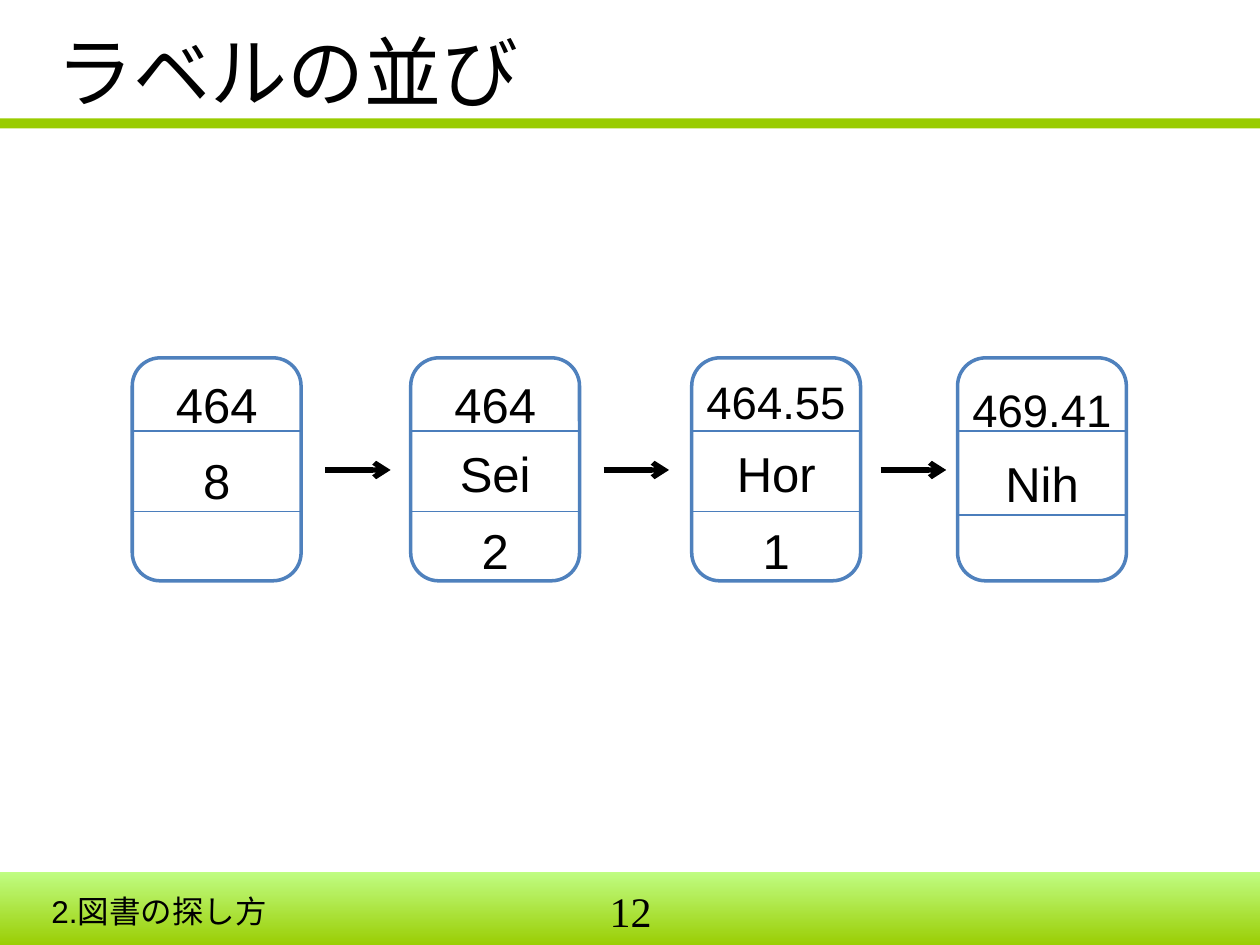
"""Build a slide showing the shelf order of four call-number labels."""
from lxml.etree import SubElement
from pptx import Presentation
from pptx.dml.color import RGBColor
from pptx.enum.shapes import MSO_CONNECTOR as CONNECTOR, MSO_SHAPE as SHAPE
from pptx.enum.text import MSO_ANCHOR as ANCHOR, PP_ALIGN as ALIGN
from pptx.oxml.ns import qn
from pptx.util import Inches, Pt

BLACK = RGBColor(0x00, 0x00, 0x00)
WHITE = RGBColor(0xFF, 0xFF, 0xFF)
GREEN = RGBColor(0x99, 0xCC, 0x00)
PALE_GREEN = RGBColor(0xC0, 0xFD, 0x83)
BORDER_BLUE = RGBColor(0x4F, 0x81, 0xBD)
DIVIDER_BLUE = RGBColor(0x4B, 0x7E, 0xBC)

LABEL_TOP, LABEL_WIDTH, LABEL_HEIGHT = 2.84, 1.34, 1.77
ARROW_Y, ARROW_LENGTH = 3.73, 0.52

deck = Presentation()
deck.slide_width, deck.slide_height = Inches(10), Inches(7.5)
page = deck.slides.add_slide(deck.slide_layouts[5])


def add_text(text, left, top, width, height, size, font="Arial", align=ALIGN.CENTER):
    box = page.shapes.add_textbox(Inches(left), Inches(top), Inches(width), Inches(height))
    box.text_frame.word_wrap = True
    para = box.text_frame.paragraphs[0]
    para.text = text
    para.alignment = align
    para.font.size = Pt(size)
    para.font.name = font
    para.font.color.rgb = BLACK


def add_line(left, y, length, color, weight):
    line = page.shapes.add_connector(
        CONNECTOR.STRAIGHT, Inches(left), Inches(y), Inches(left + length), Inches(y))
    line.line.color.rgb = color
    line.line.width = Pt(weight)
    SubElement(line._element.spPr, qn("a:effectLst"))
    return line


footer_band = page.shapes.add_shape(SHAPE.RECTANGLE, 0, Inches(6.92), Inches(10), Inches(0.6))
footer_band.fill.gradient()
footer_band.fill.gradient_angle = 270
for stop, color in zip(footer_band.fill.gradient_stops, (PALE_GREEN, GREEN)):
    stop.color.rgb = color
title_rule = page.shapes.add_shape(SHAPE.RECTANGLE, 0, Inches(0.94), Inches(10), Inches(0.08))
title_rule.fill.solid()
title_rule.fill.fore_color.rgb = GREEN
for band in (footer_band, title_rule):
    band.line.fill.background()
    band.shadow.inherit = False

title = page.shapes.title
title.left, title.top = Inches(0.35), Inches(0.18)
title.width, title.height = Inches(8.2), Inches(0.76)
title.text_frame.text = "ラベルの並び"
title.text_frame.vertical_anchor = ANCHOR.MIDDLE
title_para = title.text_frame.paragraphs[0]
title_para.alignment = ALIGN.LEFT
title_para.font.size = Pt(44)
title_para.font.name = "Calibri"
title_para.font.color.rgb = BLACK

labels = [
    (1.05, (3.42, 4.06), [("464", 2.92, 28), ("8", 3.53, 28)]),
    (3.26, (3.42, 4.06), [("464", 2.92, 28), ("Sei", 3.47, 28), ("2", 4.08, 28)]),
    (5.49, (3.42, 4.06), [("464.55", 2.92, 26), ("Hor", 3.47, 28), ("1", 4.08, 28)]),
    (7.6, (3.42, 4.09), [("469.41", 2.98, 26), ("Nih", 3.55, 28)]),
]
for left, dividers, rows in labels:
    label = page.shapes.add_shape(
        SHAPE.ROUNDED_RECTANGLE, Inches(left), Inches(LABEL_TOP),
        Inches(LABEL_WIDTH), Inches(LABEL_HEIGHT))
    label.shadow.inherit = False
    label.fill.solid()
    label.fill.fore_color.rgb = WHITE
    label.line.color.rgb = BORDER_BLUE
    label.line.width = Pt(2)
    for y in dividers:
        add_line(left, y, LABEL_WIDTH, DIVIDER_BLUE, 1)
    for text, top, size in rows:
        inset = 0 if size == 26 else 0.23
        add_text(text, left + inset, top, LABEL_WIDTH - 2 * inset, 0.57, size)

for left in (2.58, 4.79, 6.99):
    arrow = add_line(left, ARROW_Y, ARROW_LENGTH, BLACK, 3)
    SubElement(arrow.line._get_or_add_ln(), qn("a:tailEnd"), type="arrow")

add_text("2.図書の探し方", 0.31, 7.03, 3.31, 0.4, 18, align=ALIGN.LEFT)
add_text("12", 4.61, 6.98, 0.79, 0.39, 24, font="Times New Roman")

deck.save("out.pptx")
